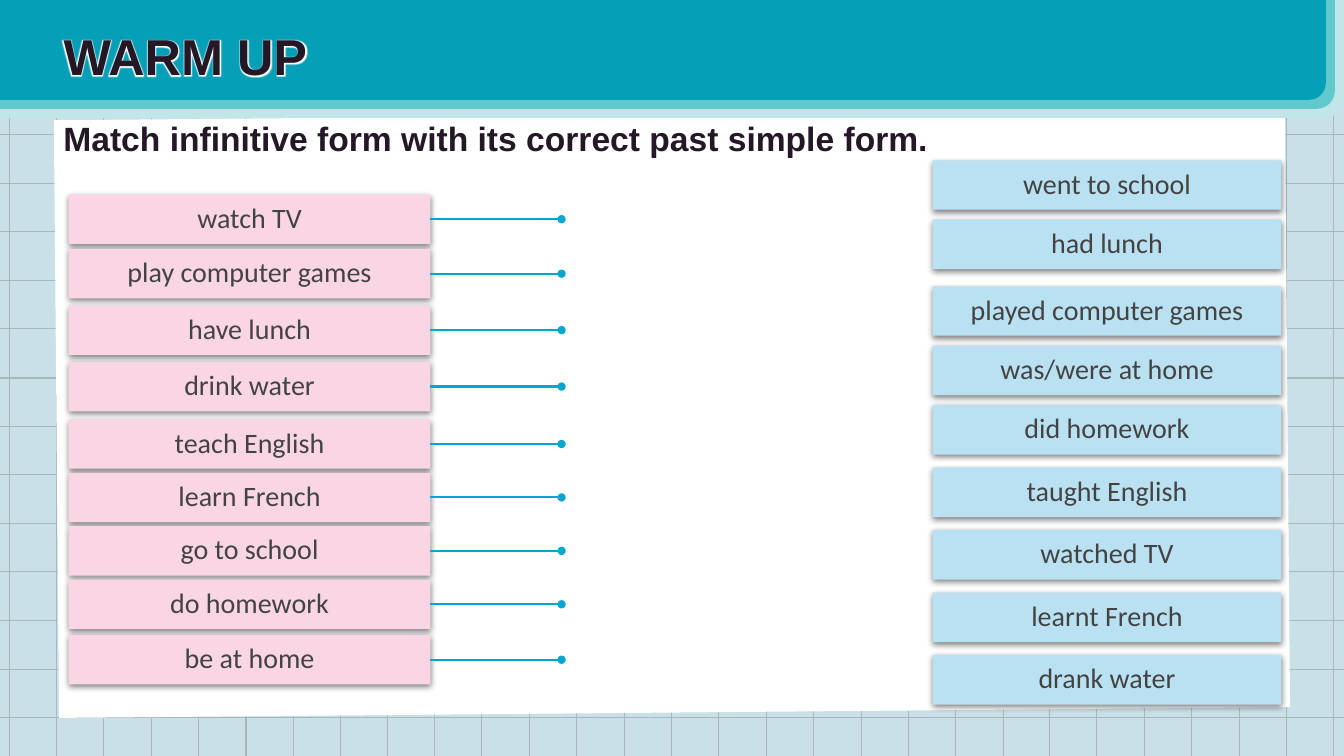
from lxml import etree
from pptx import Presentation
from pptx import util as u
from pptx.dml.color import RGBColor
from pptx.enum import shapes, text
from pptx.oxml import parse_xml
from pptx.oxml.ns import nsdecls, qn

PX = 9144  # 100 px to the inch
WIDTH, HEIGHT = 1333, 750
COLORS = {
    "background": "C9E0E6", "grid": "A4B8BD", "paper": "FFFFFF",
    "header_light": "C0E6EA", "header_mid": "62C8CE", "header": "05A0B8",
    "heading": "241826", "card_text": "434343",
    "infinitive": "FAD5E4", "past": "BAE1F1", "link": "01A7CF",
}
INFINITIVES = [
    ("watch TV", 193), ("play computer games", 247), ("have lunch", 303),
    ("drink water", 359), ("teach English", 416), ("learn French", 469),
    ("go to school", 522), ("do homework", 575), ("be at home", 630),
]
PAST_FORMS = [
    ("went to school", 159), ("had lunch", 218), ("played computer games", 284),
    ("was/were at home", 343), ("did homework", 402), ("taught English", 464),
    ("watched TV", 526), ("learnt French", 588), ("drank water", 650),
]
CARD_HEIGHT = 49
INFINITIVE_LEFT, INFINITIVE_WIDTH = 68, 359
PAST_LEFT, PAST_WIDTH = 925, 346
LINK_END = 557


def add_box(kind, left, top, width, height, color):
    shape = slide.shapes.add_shape(kind, left * PX, top * PX, width * PX, height * PX)
    shape.shadow.inherit = False
    shape.fill.solid()
    shape.fill.fore_color.rgb = RGBColor.from_string(COLORS[color])
    shape.line.fill.background()
    return shape


def add_line(x1, y1, x2, y2, color, points):
    ends = [int(n * PX) for n in (x1, y1, x2, y2)]
    line = slide.shapes.add_connector(shapes.MSO_CONNECTOR.STRAIGHT, *ends)
    line.line.color.rgb = RGBColor.from_string(COLORS[color])
    line.line.width = u.Pt(points)
    etree.SubElement(line._element.spPr, qn("a:effectLst"))
    return line


presentation = Presentation()
presentation.slide_width, presentation.slide_height = WIDTH * PX, HEIGHT * PX
slide = presentation.slides.add_slide(presentation.slide_layouts[5])
slide.background.fill.solid()
slide.background.fill.fore_color.rgb = RGBColor.from_string(COLORS["background"])

# Squared paper
for column in range(29):
    x = round(9 + column * 46.93)
    add_line(x, 0, x, HEIGHT, "grid", 0.75)
for row in range(15):
    y = round(37 + row * 48.22)
    add_line(0, y, WIDTH, y, "grid", 0.75)
paper = add_box(shapes.MSO_SHAPE.RECTANGLE, 56, 114, 1221, 593, "paper")
paper.rotation = -0.5

# Layered header, rounded at the bottom right
for inset, color in enumerate(["header_light", "header_mid", "header"]):
    band = add_box(shapes.MSO_SHAPE.ROUND_1_RECTANGLE, 0, 0,
                   WIDTH - 9 * inset, 117 - 9 * inset, color)
    band._element.spPr.xfrm.set("flipV", "1")

# Title and instruction
title = slide.shapes.title
slide.shapes._spTree.append(title._element)
title.left, title.top, title.width, title.height = (n * PX for n in (53, 20, 452, 71))
instruction = slide.shapes.add_textbox(53 * PX, 112 * PX, 1152 * PX, 50 * PX)
for shape, words, size in [
    (title, "WARM UP", 36),
    (instruction, "Match infinitive form with its correct past simple form.", 24),
]:
    frame = shape.text_frame
    frame.word_wrap = True
    frame.auto_size = text.MSO_AUTO_SIZE.NONE
    frame.vertical_anchor = text.MSO_ANCHOR.TOP
    paragraph = frame.paragraphs[0]
    paragraph.alignment = text.PP_ALIGN.LEFT
    run = paragraph.add_run()
    run.text = words
    run.font.name, run.font.size, run.font.bold = "Arial", u.Pt(size), True
    run.font.color.rgb = RGBColor.from_string(COLORS["heading"])
title_font = title.text_frame.paragraphs[0].runs[0].font
title_font.fill._xPr.find(qn("a:solidFill")).addnext(parse_xml(
    f'<a:effectLst {nsdecls("a")}><a:glow rad="38100">'
    f'<a:srgbClr val="{COLORS["paper"]}"/></a:glow></a:effectLst>'))

# Matching cards, with a link from each infinitive
for entries, left, width, color in [
    (INFINITIVES, INFINITIVE_LEFT, INFINITIVE_WIDTH, "infinitive"),
    (PAST_FORMS, PAST_LEFT, PAST_WIDTH, "past"),
]:
    for words, top in entries:
        card = add_box(shapes.MSO_SHAPE.RECTANGLE, left, top, width, CARD_HEIGHT, color)
        card._element.spPr.find(qn("a:effectLst")).append(parse_xml(
            f'<a:outerShdw {nsdecls("a")} blurRad="57150" dist="19050" dir="5400000" '
            'algn="bl" rotWithShape="0"><a:srgbClr val="000000">'
            '<a:alpha val="50000"/></a:srgbClr></a:outerShdw>'))
        frame = card.text_frame
        frame.word_wrap = True
        frame.vertical_anchor = text.MSO_ANCHOR.BOTTOM
        frame.margin_left = frame.margin_right = 10 * PX
        frame.margin_top = frame.margin_bottom = 10 * PX
        paragraph = frame.paragraphs[0]
        paragraph.alignment = text.PP_ALIGN.CENTER
        run = paragraph.add_run()
        run.text = words
        run.font.name, run.font.size = "Calibri", u.Pt(20)
        run.font.color.rgb = RGBColor.from_string(COLORS["card_text"])
        if color == "infinitive":
            middle = top + CARD_HEIGHT / 2
            link = add_line(left + width, middle, LINK_END, middle, "link", 1.5)
            link.begin_connect(card, 3)
            etree.SubElement(link.line._get_or_add_ln(), qn("a:tailEnd"), type="oval")

presentation.save("out.pptx")
